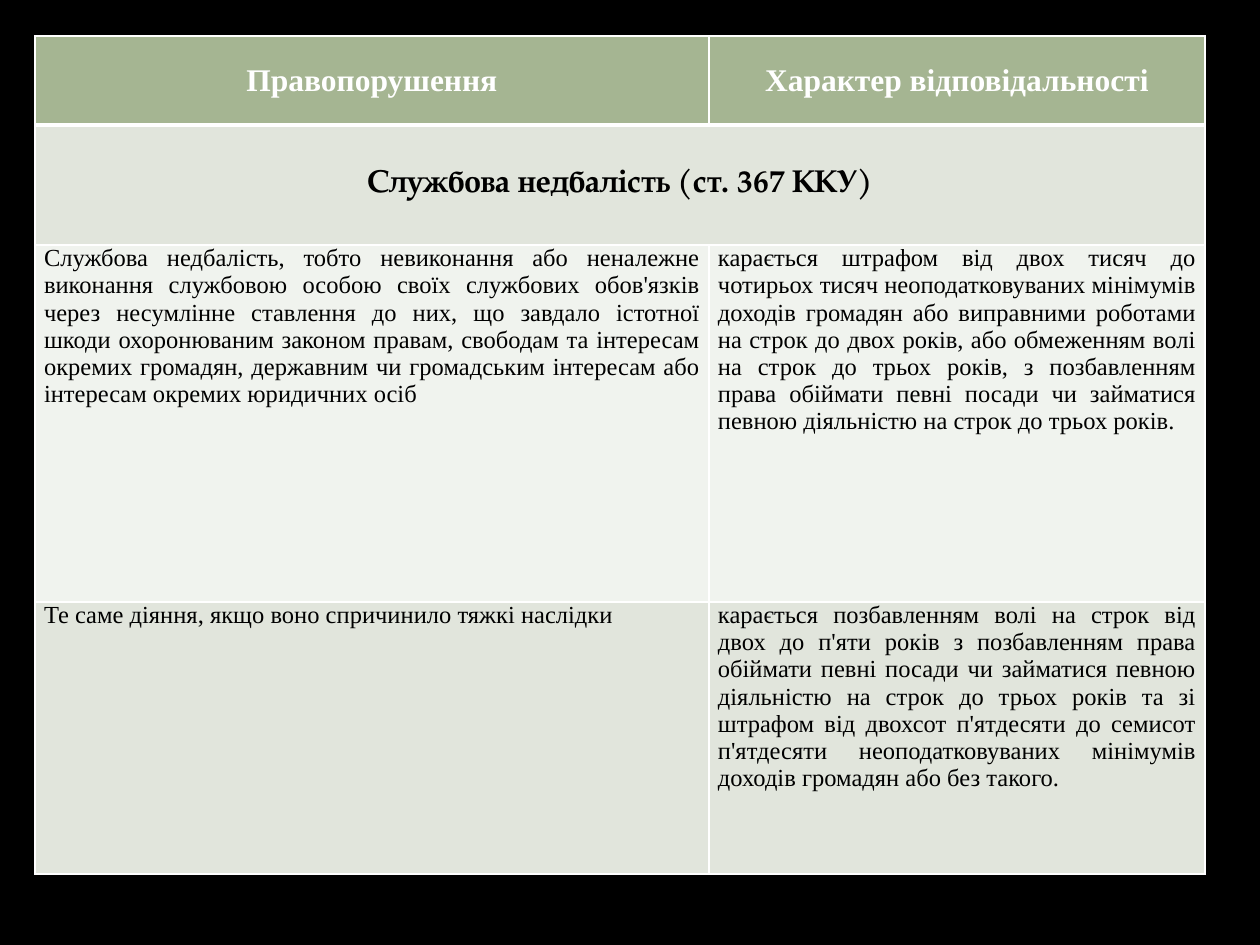
from lxml import etree
from pptx import Presentation
from pptx.dml.color import RGBColor
from pptx.enum.text import MSO_ANCHOR, PP_ALIGN
from pptx.oxml.ns import qn
from pptx.util import Pt

PX = 914400 // 126
CENTER, JUSTIFY = PP_ALIGN.CENTER, PP_ALIGN.JUSTIFY
MIDDLE, TOP = MSO_ANCHOR.MIDDLE, MSO_ANCHOR.TOP

BLACK, WHITE = "000000", "FFFFFF"
GREEN, LIGHT_GREEN, PALE_GREEN = "A5B592", "E1E5DC", "F0F3EE"
SERIF, PALATINO = "Times New Roman", "TeX Gyre Pagella"
THIN, THICK = 1, 3

COLUMN_WIDTHS = (674, 496)
ROW_HEIGHTS = (89, 120, 357, 272)

HEADINGS = ("Правопорушення", "Характер відповідальності")
ARTICLE = "Службова недбалість (ст. 367 ККУ)"
OFFENCES = (
    (
        "Службова недбалість, тобто невиконання або неналежне виконання "
        "службовою особою своїх службових обов'язків через несумлінне "
        "ставлення до них, що завдало істотної шкоди охоронюваним законом "
        "правам, свободам та інтересам окремих громадян, державним чи "
        "громадським інтересам або інтересам окремих юридичних осіб",
        "карається штрафом від двох тисяч до чотирьох тисяч "
        "неоподатковуваних мінімумів доходів громадян або виправними "
        "роботами на строк до двох років, або обмеженням волі на строк до "
        "трьох років, з позбавленням права обіймати певні посади чи "
        "займатися певною діяльністю на строк до трьох років.",
    ),
    (
        "Те саме діяння, якщо воно спричинило тяжкі наслідки",
        "карається позбавленням волі на строк від двох до п'яти років з "
        "позбавленням права обіймати певні посади чи займатися певною "
        "діяльністю на строк до трьох років та зі штрафом від двохсот "
        "п'ятдесяти до семисот п'ятдесяти неоподатковуваних мінімумів "
        "доходів громадян або без такого.",
    ),
)


def px(length):
    return length * PX


def rgb(color):
    return RGBColor.from_string(color)


def set_borders(cell, top, bottom):
    """Draw white edges; top and bottom are widths in points."""
    properties = cell._tc.get_or_add_tcPr()
    edges = (("lnL", THIN), ("lnR", THIN), ("lnT", top), ("lnB", bottom))
    for index, (tag, width) in enumerate(edges):
        line = etree.Element(qn(f"a:{tag}"), w=str(Pt(width)))
        fill = etree.SubElement(line, qn("a:solidFill"))
        etree.SubElement(fill, qn("a:srgbClr"), val=WHITE)
        properties.insert(index, line)


def style_cell(cell, fill, top=THIN, bottom=THIN):
    cell.fill.solid()
    cell.fill.fore_color.rgb = rgb(fill)
    set_borders(cell, top, bottom)


def write_cell(cell, text, size, color=BLACK, font=SERIF, bold=False,
               align=JUSTIFY, anchor=TOP):
    cell.text = text
    cell.vertical_anchor = anchor
    cell.margin_left = cell.margin_right = px(9)
    cell.margin_top = cell.margin_bottom = 0
    para = cell.text_frame.paragraphs[0]
    para.alignment = align
    span = para.runs[0]
    span.font.size = Pt(size)
    span.font.name = font
    span.font.bold = bold
    span.font.color.rgb = rgb(color)


def add_grid(page):
    frame = page.shapes.add_table(
        len(ROW_HEIGHTS), len(COLUMN_WIDTHS), px(35), px(36),
        px(sum(COLUMN_WIDTHS)), px(sum(ROW_HEIGHTS)))
    table = frame.table
    for column, width in zip(table.columns, COLUMN_WIDTHS):
        column.width = px(width)
    for row, height in zip(table.rows, ROW_HEIGHTS):
        row.height = px(height)
    return table


def fill_table(table):
    for cell, heading in zip(table.rows[0].cells, HEADINGS):
        style_cell(cell, GREEN, bottom=THICK)
        write_cell(cell, heading, 18, WHITE, bold=True,
                   align=CENTER, anchor=MIDDLE)

    for cell in table.rows[1].cells:
        style_cell(cell, LIGHT_GREEN, top=THICK)
    article = table.cell(1, 0)
    article.merge(table.cell(1, 1))
    write_cell(article, ARTICLE, 18, font=PALATINO, bold=True,
               align=CENTER, anchor=MIDDLE)

    fills = (PALE_GREEN, LIGHT_GREEN)
    for row_index, (texts, fill) in enumerate(zip(OFFENCES, fills), start=2):
        for cell, text in zip(table.rows[row_index].cells, texts):
            style_cell(cell, fill)
            write_cell(cell, text, 14)


def main():
    deck = Presentation()
    deck.slide_width, deck.slide_height = px(1260), px(945)
    page = deck.slides.add_slide(deck.slide_layouts[6])
    page.background.fill.solid()
    page.background.fill.fore_color.rgb = rgb(BLACK)
    fill_table(add_grid(page))
    deck.save("out.pptx")


if __name__ == "__main__":
    main()
